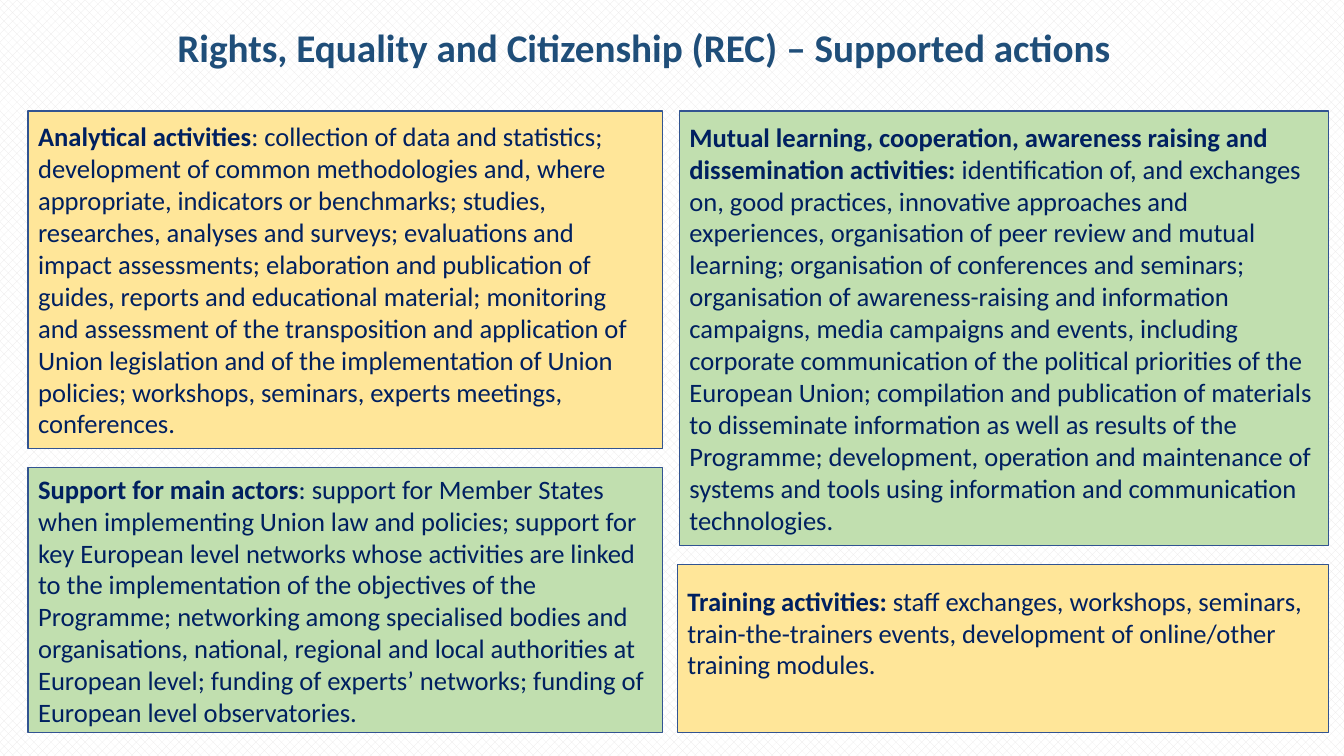
"""Build the slide on the supported actions of the REC programme."""
from dataclasses import dataclass

from pptx import Presentation
from pptx.dml.color import RGBColor as Rgb
from pptx.enum.dml import MSO_PATTERN as Pattern
from pptx.enum.shapes import MSO_SHAPE as Shape
from pptx.enum.text import MSO_ANCHOR as Anchor, PP_ALIGN as Align
from pptx.slide import Slide
from pptx.text.text import _Paragraph as Para
from pptx.util import Inches, Pt

WIDE, HIGH = Inches(13.33), Inches(7.5)
TOP, FOOT, GAP = 14.67, 96.93, 2.53
LEFT, EDGE = 2.1, 98.87


@dataclass(frozen=True)
class Theme:
    """Colours, font and type sizes."""
    font: str = "Calibri"
    head: Rgb = Rgb(0x1F, 0x4E, 0x79)
    text: Rgb = Rgb(0x00, 0x20, 0x60)
    line: Rgb = Rgb(0x32, 0x54, 0x91)
    gold: Rgb = Rgb(0xFF, 0xE6, 0x99)
    green: Rgb = Rgb(0xC1, 0xDF, 0xAF)
    weave: Rgb = Rgb(0xE9, 0xE7, 0xE7)
    white: Rgb = Rgb(0xFF, 0xFF, 0xFF)
    title: int = 28
    body: int = 19


@dataclass(frozen=True)
class Area:
    """Edges on a grid of 100 columns and 100 rows."""
    left: float
    top: float
    right: float
    foot: float

    def box(self) -> tuple[int, int, int, int]:
        """Give left, top, width and height as lengths."""
        col, row = WIDE / 100, HIGH / 100
        return (round(self.left * col), round(self.top * row),
                round((self.right - self.left) * col),
                round((self.foot - self.top) * row))


@dataclass(frozen=True)
class Panel:
    """A filled box with a bold lead and plain text."""
    area: Area
    fill: Rgb
    lead: str
    text: str
    pad: float = 0.05


THEME = Theme()
MID = 49.29
BREAK_L, BREAK_R = 59.33, 72.13

PANELS = (
    Panel(Area(LEFT, TOP, MID, BREAK_L), THEME.gold,
          "Analytical activities",
          ": collection of data and statistics; development of common "
          "methodologies and, where appropriate, indicators or benchmarks; "
          "studies, researches, analyses and surveys; evaluations and impact "
          "assessments; elaboration and publication of guides, reports and "
          "educational material; monitoring and assessment of the "
          "transposition and application of Union legislation and of the "
          "implementation of Union policies; workshops, seminars, experts "
          "meetings, conferences."),
    Panel(Area(50.56, TOP, EDGE, BREAK_R), THEME.green,
          "Mutual learning, cooperation, awareness raising and "
          "dissemination activities:",
          " identification of, and exchanges on, good practices, innovative "
          "approaches and experiences, organisation of peer review and mutual "
          "learning; organisation of conferences and seminars; organisation "
          "of awareness-raising and information campaigns, media campaigns "
          "and events, including corporate communication of the political "
          "priorities of the European Union; compilation and publication of "
          "materials to disseminate information as well as results of the "
          "Programme; development, operation and maintenance of systems and "
          "tools using information and communication technologies."),
    Panel(Area(LEFT, BREAK_L + GAP, MID, FOOT), THEME.green,
          "Support for main actors",
          ": support for Member States when implementing Union law and "
          "policies; support for key European level networks whose activities "
          "are linked to the implementation of the objectives of the "
          "Programme; networking among specialised bodies and organisations, "
          "national, regional and local authorities at European level; "
          "funding of experts’ networks; funding of European level "
          "observatories."),
    Panel(Area(50.41, BREAK_R + GAP, EDGE, FOOT), THEME.gold,
          "Training activities:",
          " staff exchanges, workshops, seminars, train-the-trainers events, "
          "development of online/other training modules.", pad=0.37),
)


def add_run(para: Para, text: str, size: int, tint: Rgb, bold: bool) -> None:
    """Add one styled run to a paragraph."""
    run = para.add_run()
    run.text = text
    font = run.font
    font.name, font.size, font.bold = THEME.font, Pt(size), bold
    font.color.rgb = tint


def add_title(slide: Slide, text: str) -> None:
    """Add the centred heading."""
    frame = slide.shapes.add_textbox(*Area(4.43, 2.13, 91.37, 10.93).box()).text_frame
    frame.word_wrap = True
    frame.vertical_anchor = Anchor.MIDDLE
    para = frame.paragraphs[0]
    para.alignment, para.line_spacing = Align.CENTER, 0.9
    add_run(para, text, THEME.title, THEME.head, True)


def add_panel(slide: Slide, panel: Panel) -> None:
    """Draw one panel with its text."""
    shape = slide.shapes.add_shape(Shape.RECTANGLE, *panel.area.box())
    shape.shadow.inherit = False
    shape.fill.solid()
    shape.fill.fore_color.rgb = panel.fill
    shape.line.color.rgb = THEME.line
    shape.line.width = Pt(1)
    frame = shape.text_frame
    frame.word_wrap = True
    frame.vertical_anchor = Anchor.MIDDLE
    frame.margin_bottom = Inches(panel.pad)
    para = frame.paragraphs[0]
    para.alignment = Align.LEFT
    add_run(para, panel.lead, THEME.body, THEME.text, True)
    add_run(para, panel.text, THEME.body, THEME.text, False)


def main() -> None:
    """Build and save the deck."""
    deck = Presentation()
    deck.slide_width, deck.slide_height = WIDE, HIGH
    slide = deck.slides.add_slide(deck.slide_layouts[6])
    back = slide.background.fill
    back.patterned()
    back.pattern = Pattern.from_xml("pct40")
    back.fore_color.rgb = THEME.weave
    back.back_color.rgb = THEME.white
    add_title(slide, "Rights, Equality and Citizenship (REC) – Supported actions")
    for panel in PANELS:
        add_panel(slide, panel)
    deck.save("out.pptx")


if __name__ == "__main__":
    main()
